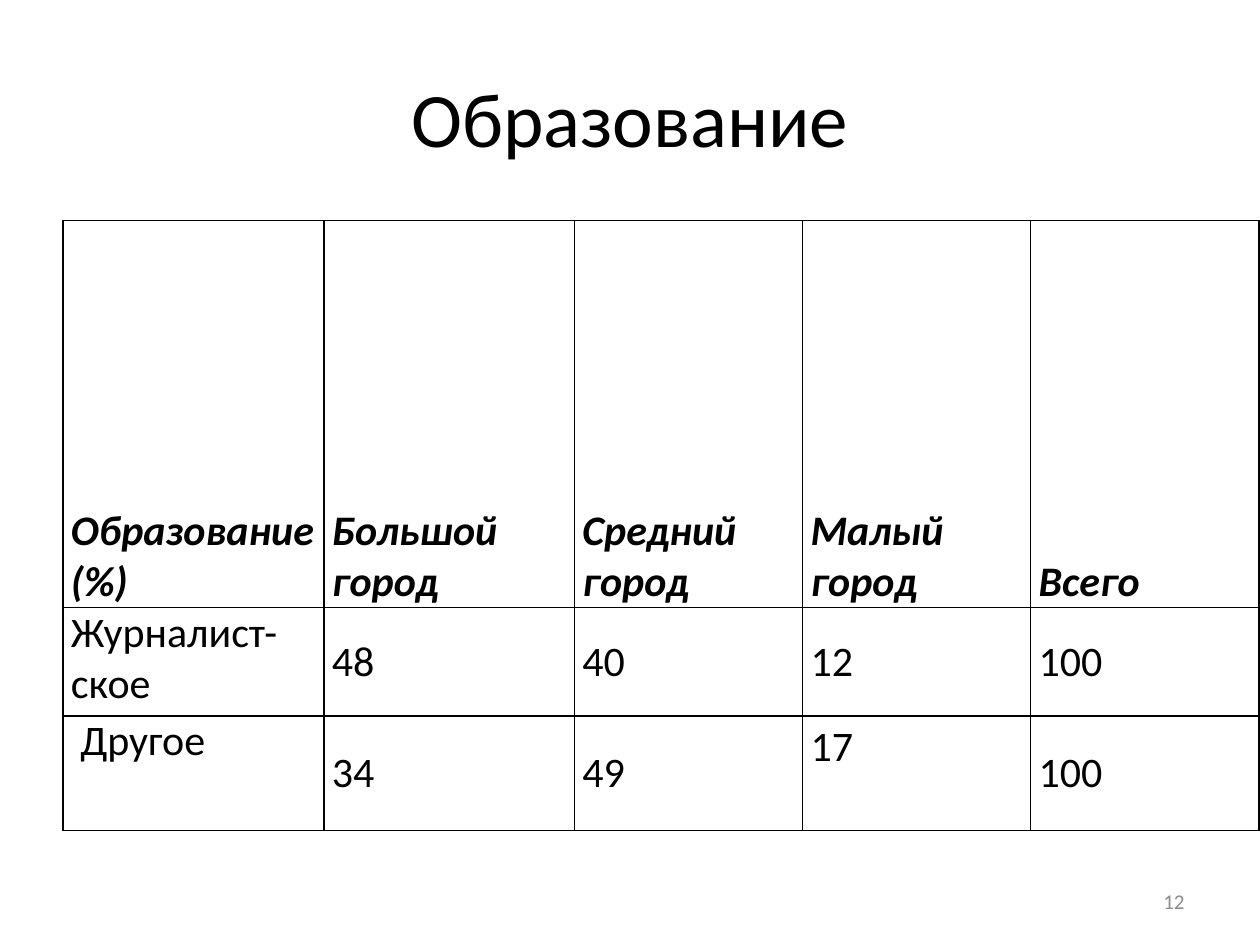
import pptx
import pptx.dml.color
import pptx.enum.text
import pptx.oxml
import pptx.oxml.ns
import pptx.util
from pptx.util import Cm

ALIGN = pptx.enum.text.PP_ALIGN
ANCHOR = pptx.enum.text.MSO_ANCHOR
COLORS = {"text": "000000", "number": "8C8C8C", "cell": "FFFFFF", "border": "000000"}
COLUMN_WIDTHS = [5.26, 5.05, 4.6, 4.6, 4.6]
ROW_HEIGHTS = [7.8, 2.18, 2.31]
ROWS = [
    ["Образование (%)", "Большой город", "Средний город", "Малый город", "Всего"],
    ["Журналист-ское", "48", "40", "12", "100"],
    ["Другое", "34", "49", "17", "100"],
]


def color(name):
    return pptx.dml.color.RGBColor.from_string(COLORS[name])


def write_text(text_frame, text, size, color_name, alignment, emphasis=False):
    text_frame.text = text
    paragraph = text_frame.paragraphs[0]
    paragraph.alignment = alignment
    font = paragraph.runs[0].font
    font.name = "Calibri"
    font.size = pptx.util.Pt(size)
    font.bold = font.italic = emphasis
    font.color.rgb = color(color_name)


def add_label(slide, box, text, size, color_name, alignment):
    shape = slide.shapes.add_textbox(*map(Cm, box))
    shape.text_frame.word_wrap = True
    shape.text_frame.vertical_anchor = ANCHOR.MIDDLE
    write_text(shape.text_frame, text, size, color_name, alignment)


def add_borders(cell):
    properties = cell._tc.get_or_add_tcPr()
    for side in "LRTB":
        properties.append(pptx.oxml.parse_xml(
            f'<a:ln{side} {pptx.oxml.ns.nsdecls("a")} w="12700"><a:solidFill>'
            f'<a:srgbClr val="{COLORS["border"]}"/></a:solidFill></a:ln{side}>'))


def format_cell(cell, text, anchor, is_header):
    write_text(cell.text_frame, text, 24, "text", ALIGN.JUSTIFY, is_header)
    cell.vertical_anchor = anchor
    cell.margin_left = cell.margin_right = Cm(0.16)
    cell.margin_top = cell.margin_bottom = 0
    add_borders(cell)
    cell.fill.solid()
    cell.fill.fore_color.rgb = color("cell")


def add_education_table(slide):
    frame = slide.shapes.add_table(
        len(ROWS), len(COLUMN_WIDTHS), Cm(1.27), Cm(4.45),
        Cm(sum(COLUMN_WIDTHS)), Cm(sum(ROW_HEIGHTS)))
    table = frame.table
    table.first_row = table.horz_banding = False
    for column, width in zip(table.columns, COLUMN_WIDTHS):
        column.width = Cm(width)
    for row_index, (height, texts) in enumerate(zip(ROW_HEIGHTS, ROWS)):
        table.rows[row_index].height = Cm(height)
        for column_index, text in enumerate(texts):
            is_header = row_index == 0
            body_anchor = ANCHOR.MIDDLE if column_index else ANCHOR.TOP
            anchor = ANCHOR.BOTTOM if is_header else body_anchor
            format_cell(table.cell(row_index, column_index), text, anchor, is_header)
    table.cell(2, 0).margin_left = Cm(0.35)
    table.cell(2, 3).margin_bottom = Cm(1.05)


def main():
    presentation = pptx.Presentation()
    presentation.slide_width = Cm(25.4)
    presentation.slide_height = Cm(19.05)
    slide = presentation.slides.add_slide(presentation.slide_layouts[6])
    add_label(slide, (18.2, 17.66, 5.93, 1.01), "12", 12, "number", ALIGN.RIGHT)
    add_label(slide, (1.27, 0.76, 22.86, 3.18), "Образование", 44, "text", ALIGN.CENTER)
    add_education_table(slide)
    presentation.save("out.pptx")


if __name__ == "__main__":
    main()
